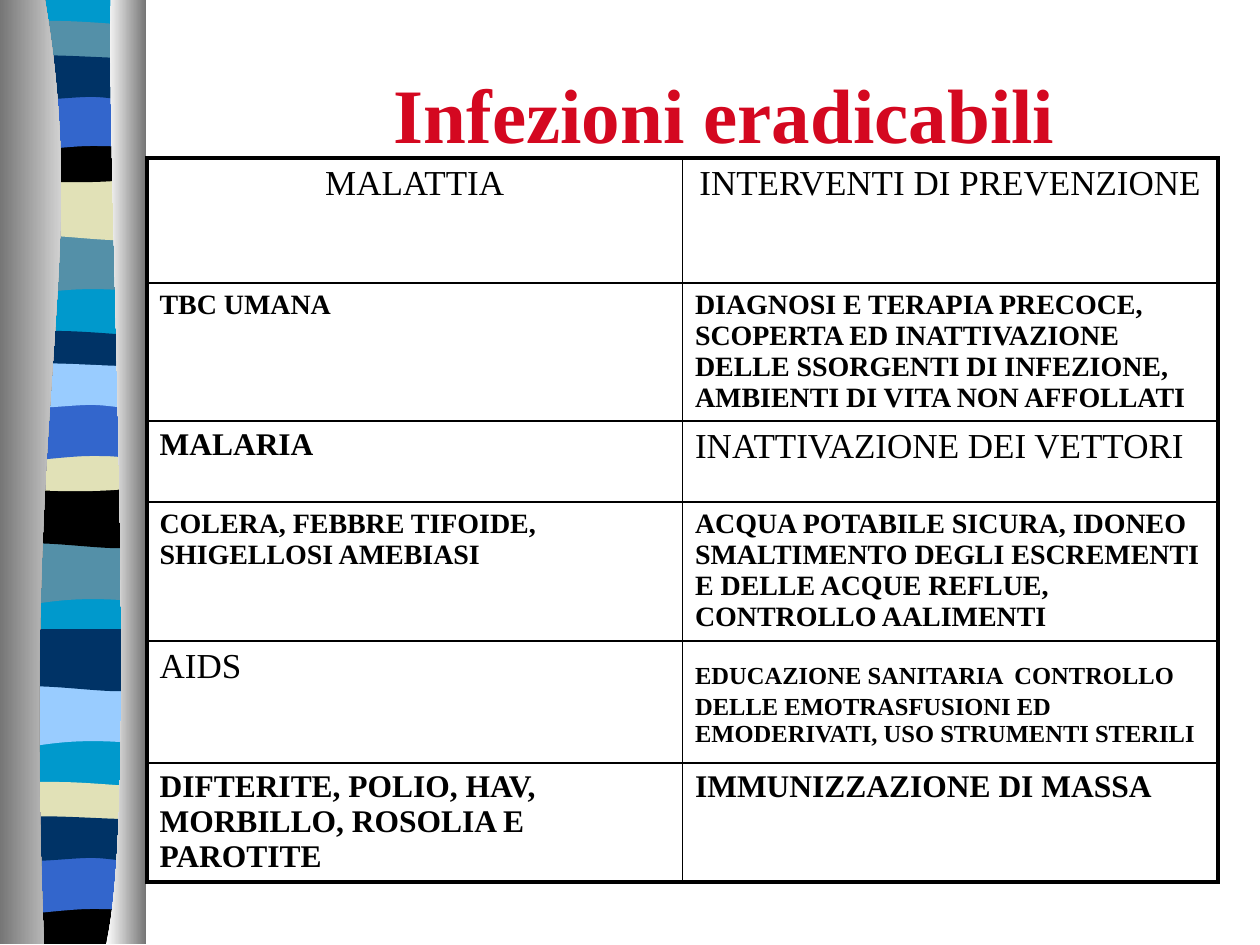
from lxml import etree
from pptx import Presentation
from pptx.dml.color import RGBColor
from pptx.enum.text import MSO_ANCHOR, PP_ALIGN
from pptx.oxml.ns import qn
from pptx.util import Pt

CENTER, LEFT = PP_ALIGN.CENTER, PP_ALIGN.LEFT
MIDDLE = MSO_ANCHOR.MIDDLE
PX = 914400 / 126
FONT = "Times New Roman"
TITLE_ONLY = 5
COLORS = {
    "cyan": "0099CC", "teal": "5490A8", "sand": "E1E1B7", "navy": "003366",
    "black": "000000", "blue": "3366CC", "sky": "99CCFF", "red": "D40820",
    "gray": "767676", "white": "FFFFFF",
}
RGB = {name: RGBColor.from_string(value) for name, value in COLORS.items()}


def add_outline(shapes, steps, top=0):
    """Draw a closed outline; a step is a point (x, y) or a cubic Bézier (three points)."""
    points = [(step[i], step[i + 1] + top) for step in steps for i in range(0, len(step), 2)]
    builder = shapes.build_freeform(*points[0], scale=PX)
    builder.add_line_segments(points[1:], close=True)
    shape = builder.convert_to_shape()
    shape.shadow.inherit = False
    shape.line.fill.background()
    segments = iter(list(shape._element.iter(qn("a:lnTo"))))
    for step in steps[1:]:
        first = next(segments)
        if len(step) == 6:
            first.tag  # the first of three control points
            curve = etree.Element(qn("a:cubicBezTo"))
            first.addprevious(curve)
            for segment in (first, next(segments), next(segments)):
                curve.append(segment[0])
                segment.getparent().remove(segment)
    return shape


def add_border(cell, side, points):
    line = etree.SubElement(cell._tc.get_or_add_tcPr(), qn(f"a:{side}"), w=str(Pt(points)))
    fill = etree.SubElement(line, qn("a:solidFill"))
    etree.SubElement(fill, qn("a:srgbClr"), val=COLORS["black"])


deck = Presentation()
deck.slide_width, deck.slide_height = round(1260 * PX), round(945 * PX)
page = deck.slides.add_slide(deck.slide_layouts[TITLE_ONLY])

# Title
title = page.shapes.title
title.left, title.top, title.width, title.height = [round(v * PX) for v in (189, 66, 1071, 94)]
title.text_frame.vertical_anchor = MIDDLE
para = title.text_frame.paragraphs[0]
para.alignment = CENTER
span = para.add_run()
span.text = "Infezioni eradicabili"
for key, value in {"name": FONT, "size": Pt(44), "bold": True}.items():
    setattr(span.font, key, value)
span.font.color.rgb = RGB["red"]

# Striped ribbon: band profiles, most of them used at several heights
L, R = 6, 143
PROFILES = {
    "base": [(R, 0), (R, 941), (L, 941), (L, 0)],
    "wave": [(R, 0), (R, 59), (49, 49, 30, 69, L, 59), (L, 0)],
    "slope": [(R, 0), (R, 59), (121, 69, 49, 52, L, 59), (L, 0)],
    "lens": [(R, 6), (R, 37), (121, 42, 30, 42, L, 37), (L, 6),
             (15, 0, 36, 1, 59, 1), (82, 1, 126, 5, R, 6)],
    "bowl": [(R, 0), (R, 41), (121, 48, 30, 48, L, 41), (L, 0), (91, 6, 115, 0, R, 0)],
    "floor": [(R, 0), (R, 47), (L, 47), (L, 0), (91, 6, 115, 0, R, 0)],
    "arch": [(R, 0), (R, 59), (122, 53, 113, 53, 91, 53), (68, 53, 28, 59, L, 59), (L, 0)],
    "swell": [(R, 6), (R, 45), (135, 52, 113, 45, 91, 45), (68, 45, 21, 52, L, 45),
              (L, 6), (26, 0, 100, 6, 122, 6), (145, 6, 139, 6, R, 6)],
}
BANDS = [
    ("base", 0, "cyan"),
    ("wave", 233, "teal"), ("slope", 178, "sand"), ("lens", 20, "teal"),
    ("bowl", 136, "black"), ("arch", 93, "blue"), ("swell", 52, "navy"),
    ("wave", 543, "teal"), ("slope", 486, "black"), ("lens", 330, "navy"),
    ("bowl", 445, "sand"), ("arch", 403, "blue"), ("swell", 360, "sky"),
    ("wave", 685, "sky"), ("slope", 629, "navy"), ("lens", 781, "sand"),
    ("floor", 897, "black"), ("arch", 856, "blue"), ("swell", 813, "navy"),
]
for profile, top, color in BANDS:
    band = add_outline(page.shapes, PROFILES[profile], top)
    band.fill.solid()
    band.fill.fore_color.rgb = RGB[color]

# Shaded columns on both sides of the ribbon
COLUMNS = [
    ([(45, 0), (91, 272, 21, 373, 44, 944), (0, 944), (0, 0)], "gray", "white"),
    ([(111, 0), (106, 158, 140, 814, 106, 944), (146, 944), (146, 0)], "white", "gray"),
]
for steps, start, end in COLUMNS:
    column = add_outline(page.shapes, steps)
    column.fill.gradient()
    column.fill.gradient_angle = 0
    for stop, color, position in zip(column.fill.gradient_stops, (start, end), (0, 1)):
        stop.color.rgb = RGB[color]
        stop.position = position

# Table: each cell is a list of (text, size, bold)
ROWS = [
    (125, [("MALATTIA", 20, False)], [("INTERVENTI DI PREVENZIONE", 20, False)]),
    (138, [("TBC UMANA", 16, True)],
     [("DIAGNOSI E TERAPIA PRECOCE, SCOPERTA ED INATTIVAZIONE DELLE SSORGENTI "
       "DI INFEZIONE, AMBIENTI DI VITA NON AFFOLLATI", 16, True)]),
    (81, [("MALARIA", 18, True)], [("INATTIVAZIONE DEI VETTORI", 20, False)]),
    (139, [("COLERA, FEBBRE TIFOIDE, SHIGELLOSI AMEBIASI", 16, True)],
     [("ACQUA POTABILE SICURA, IDONEO SMALTIMENTO DEGLI ESCREMENTI E DELLE "
       "ACQUE REFLUE, CONTROLLO AALIMENTI", 16, True)]),
    (122, [("AIDS", 20, False)],
     [("EDUCAZIONE SANITARIA", 14, True), (" ", 24, True),
      ("CONTROLLO DELLE EMOTRASFUSIONI ED EMODERIVATI, USO STRUMENTI STERILI", 14, True)]),
    (119, [("DIFTERITE, POLIO, HAV, MORBILLO, ROSOLIA E PAROTITE", 18, True)],
     [("IMMUNIZZAZIONE DI MASSA", 18, True)]),
]
THIN, THICK = 1, 2.25
height = sum(row[0] for row in ROWS)
frame = page.shapes.add_table(len(ROWS), 2, *[round(v * PX) for v in (147, 158, 1071, height)])
table = frame.table
table.first_row = table.horz_banding = False
for r, (row_height, *cells) in enumerate(ROWS):
    table.rows[r].height = round(row_height * PX)
    for c, runs in enumerate(cells):
        cell = table.cell(r, c)
        outer = {"lnL": c == 0, "lnR": c == 1, "lnT": r == 0, "lnB": r == len(ROWS) - 1}
        for side, is_outer in outer.items():
            add_border(cell, side, THICK if is_outer else THIN)
        cell.fill.background()
        para = cell.text_frame.paragraphs[0]
        para.alignment = CENTER if r == 0 else LEFT
        for text, size, bold in runs:
            span = para.add_run()
            span.text = text
            for key, value in {"name": FONT, "size": Pt(size), "bold": bold}.items():
                setattr(span.font, key, value)
            span.font.color.rgb = RGB["black"]

deck.save("out.pptx")
